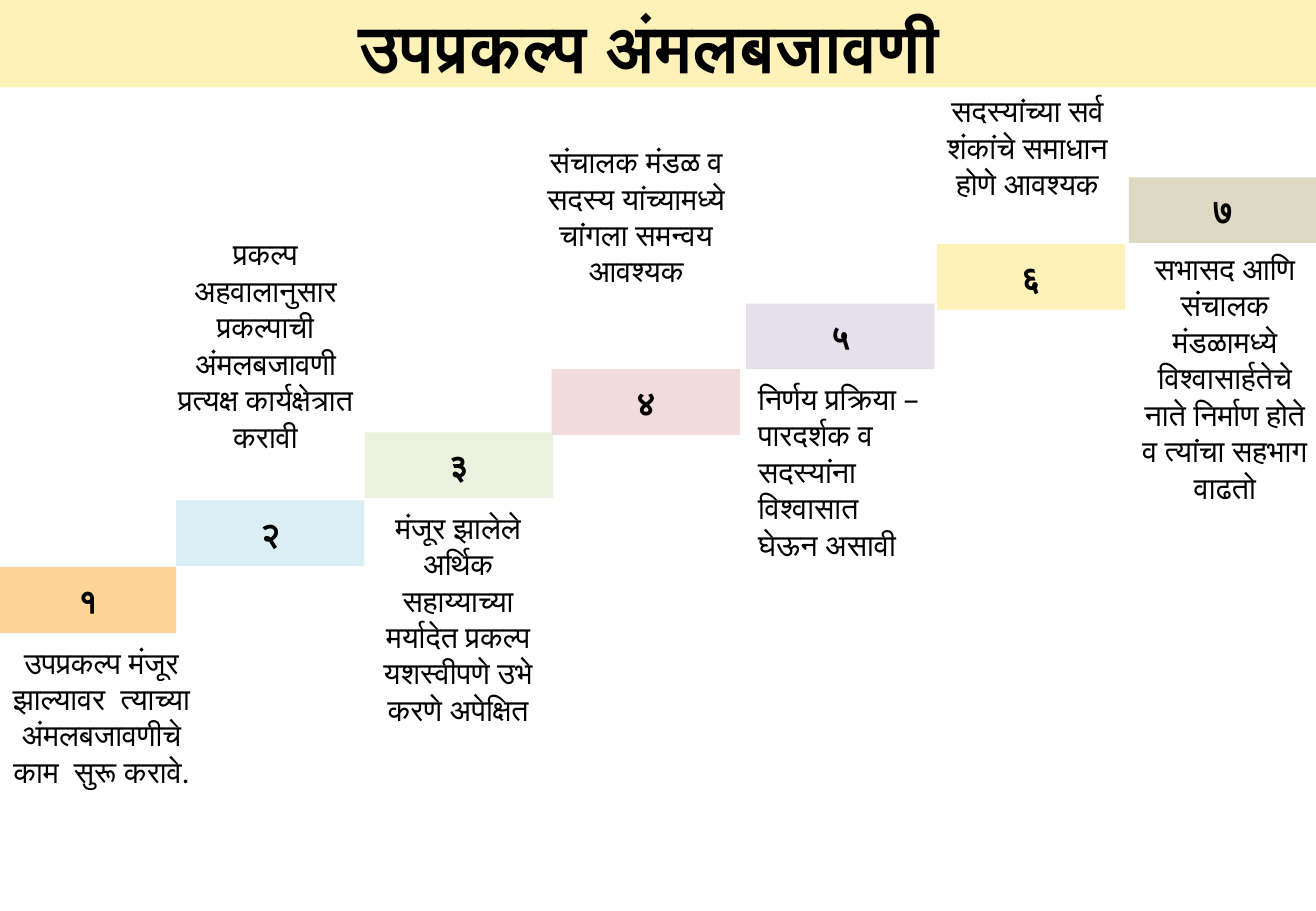
from dataclasses import dataclass

from pptx import Presentation
from pptx.dml.color import RGBColor
from pptx.enum.shapes import MSO_SHAPE as Preset
from pptx.enum.text import MSO_ANCHOR as Anchor, MSO_AUTO_SIZE as AutoSize, PP_ALIGN as Align
from pptx.shapes.autoshape import Shape
from pptx.shapes.shapetree import GroupShapes, SlideShapes
from pptx.util import Inches, Pt

FONT = "Calibri"
SLIDE_WIDTH, SLIDE_HEIGHT = 10.83, 7.5
STEP_HEIGHT = 0.54
PALE_YELLOW = "FFF2B9"


@dataclass(frozen=True)
class Box:
    left: float
    top: float
    width: float
    height: float


@dataclass(frozen=True)
class Step:
    number: str
    left: float
    top: float
    fill: str
    note: str
    note_box: Box
    width: float = 1.55
    note_align: Align = Align.CENTER


STEPS = [
    Step("१", 0, 4.67, "FFD597",
         "उपप्रकल्प मंजूर झाल्यावर  त्याच्या अंमलबजावणीचे काम  सुरू करावे.",
         Box(0, 5.25, 1.67, 2.22), width=1.45),
    Step("२", 1.45, 4.12, "DBEEF4",
         "प्रकल्प अहवालानुसार प्रकल्पाची अंमलबजावणी प्रत्यक्ष कार्यक्षेत्रात करावी",
         Box(1.33, 1.89, 1.71, 2.22)),
    Step("३", 3, 3.56, "EBF1DE",
         "मंजूर झालेले अर्थिक सहाय्याच्या मर्यादेत प्रकल्प यशस्वीपणे उभे करणे अपेक्षित",
         Box(3, 4.14, 1.54, 2.52)),
    Step("४", 4.54, 3.04, "F2DCDB",
         "संचालक मंडळ व सदस्य यांच्यामध्ये चांगला समन्वय आवश्यक",
         Box(4.38, 1.13, 1.71, 1.92)),
    Step("५", 6.14, 2.5, "E6E0EC",
         "निर्णय प्रक्रिया – पारदर्शक व सदस्यांना विश्वासात घेऊन असावी",
         Box(6.14, 3.08, 1.57, 1.62), note_align=Align.LEFT),
    Step("६", 7.71, 2.01, PALE_YELLOW,
         "सदस्यांच्या सर्व शंकांचे समाधान होणे आवश्यक",
         Box(7.67, 0.71, 1.57, 1.31)),
    Step("७", 9.29, 1.46, "DDD9C3",
         "सभासद आणि संचालक मंडळामध्ये विश्वासार्हतेचे नाते निर्माण होते व त्यांचा सहभाग वाढतो",
         Box(9.29, 2.01, 1.58, 2.52)),
]


def color(value: str) -> RGBColor:
    return RGBColor.from_string(value)


def write_text(shape: Shape, text: str, *, size: float, bold: bool = False,
               align: Align = Align.CENTER, anchor: Anchor = Anchor.TOP) -> None:
    frame = shape.text_frame
    frame.word_wrap = True
    frame.vertical_anchor = anchor
    paragraph = frame.paragraphs[0]
    paragraph.alignment = align
    run = paragraph.add_run()
    run.text = text
    run.font.name = FONT
    run.font.size = Pt(size)
    run.font.bold = bold
    run.font.color.rgb = color("000000")


def place(box: Box) -> list[int]:
    return [Inches(length) for length in (box.left, box.top, box.width, box.height)]


def add_block(shapes: SlideShapes | GroupShapes, box: Box, fill: str) -> Shape:
    shape = shapes.add_shape(Preset.RECTANGLE, *place(box))
    shape.shadow.inherit = False
    shape.fill.solid()
    shape.fill.fore_color.rgb = color(fill)
    shape.line.fill.background()
    return shape


def add_step(shapes: GroupShapes, step: Step) -> None:
    block = add_block(shapes, Box(step.left, step.top, step.width, STEP_HEIGHT), step.fill)
    write_text(block, step.number, size=20, bold=True, anchor=Anchor.MIDDLE)


def add_note(shapes: GroupShapes, step: Step) -> None:
    note = shapes.add_textbox(*place(step.note_box))
    write_text(note, step.note, size=18, align=step.note_align)
    note.text_frame.auto_size = AutoSize.SHAPE_TO_FIT_TEXT


def main() -> None:
    presentation = Presentation()
    presentation.slide_width = Inches(SLIDE_WIDTH)
    presentation.slide_height = Inches(SLIDE_HEIGHT)
    slide = presentation.slides.add_slide(presentation.slide_layouts[6])

    # Staircase of numbered steps with their notes
    staircase = slide.shapes.add_group_shape()
    for step in STEPS:
        add_step(staircase.shapes, step)
    for step in STEPS:
        add_note(staircase.shapes, step)

    # Title band
    title = add_block(slide.shapes, Box(0, 0, SLIDE_WIDTH, 0.72), PALE_YELLOW)
    write_text(title, "उपप्रकल्प अंमलबजावणी ", size=39.6, bold=True)

    presentation.save("out.pptx")


if __name__ == "__main__":
    main()
